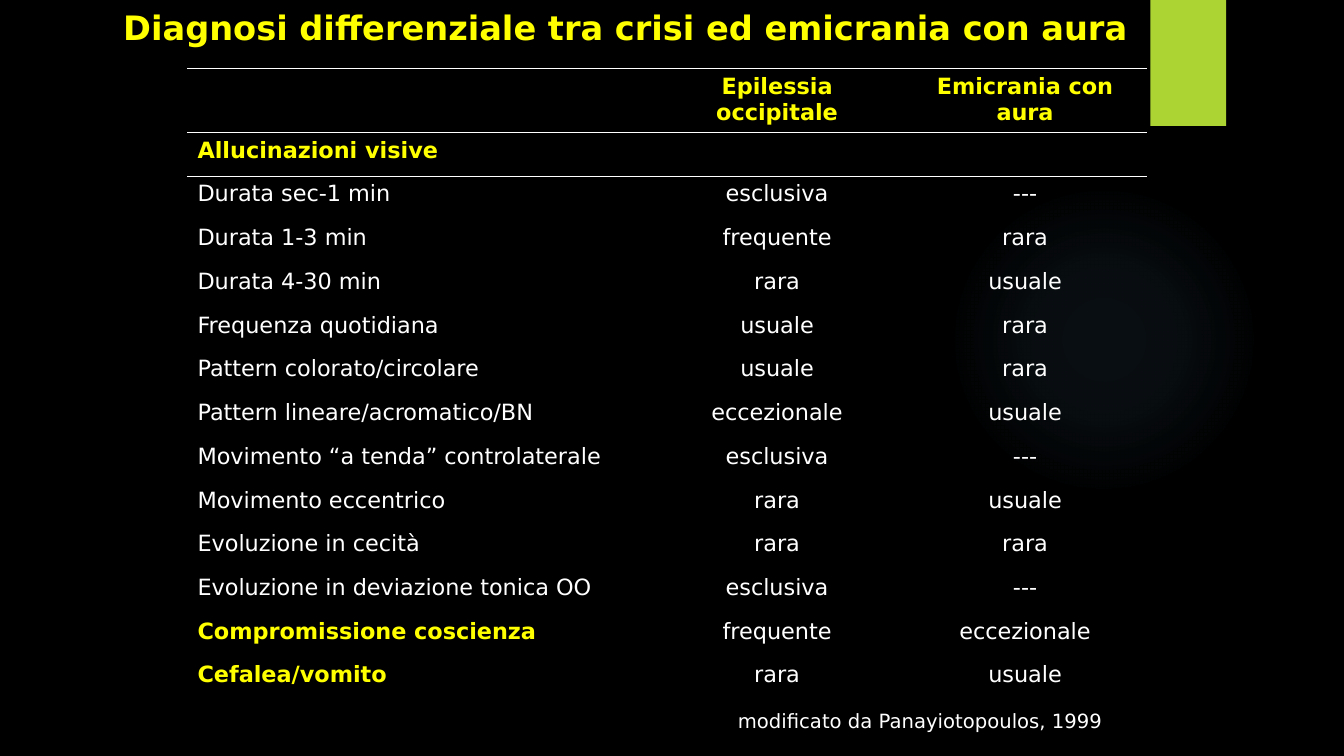
import pptx
import pptx.dml.color
import pptx.enum.shapes
import pptx.enum.text
import pptx.oxml
import pptx.oxml.ns
import pptx.util

WIDTH, HEIGHT = pptx.util.Inches(13.333), pptx.util.Inches(7.5)
FONT = "DejaVu Sans"
COLORS = {"back": "000000", "accent": "FFFF00", "text": "FFFFFF",
          "tab": "ACD433", "glow": "7AC4F0"}
NO_STYLE = "{2D5ABB26-0587-4C30-8999-92F81FD0307C}"
ALIGN = pptx.enum.text.PP_ALIGN
ANCHOR = pptx.enum.text.MSO_ANCHOR
SHAPE = pptx.enum.shapes.MSO_SHAPE

COLUMNS = [34.5, 18.75, 18.15]
HEADER_ROW, BODY_ROW = 8.4, 5.79
ROWS = [
    ("", "Epilessia occipitale", "Emicrania con aura"),
    ("Allucinazioni visive", "", ""),
    ("Durata sec-1 min", "esclusiva", "---"),
    ("Durata 1-3 min", "frequente", "rara"),
    ("Durata 4-30 min", "rara", "usuale"),
    ("Frequenza quotidiana", "usuale", "rara"),
    ("Pattern colorato/circolare", "usuale", "rara"),
    ("Pattern lineare/acromatico/BN", "eccezionale", "usuale"),
    ("Movimento “a tenda” controlaterale", "esclusiva", "---"),
    ("Movimento eccentrico", "rara", "usuale"),
    ("Evoluzione in cecità", "rara", "rara"),
    ("Evoluzione in deviazione tonica OO", "esclusiva", "---"),
    ("Compromissione coscienza", "frequente", "eccezionale"),
    ("Cefalea/vomito", "rara", "usuale"),
]
HEADINGS = {"Allucinazioni visive", "Compromissione coscienza", "Cefalea/vomito"}


def across(share):
    """Return a percentage of the slide width."""
    return round(WIDTH * share / 100)


def down(share):
    """Return a percentage of the slide height."""
    return round(HEIGHT * share / 100)


def box(x, y, w, h):
    """Return a left, top, width and height from slide percentages."""
    return across(x), down(y), across(w), down(h)


def rgb(name):
    """Return a named colour."""
    return pptx.dml.color.RGBColor.from_string(COLORS[name])


def xml(body):
    """Return an element parsed from DrawingML with the a: prefix declared."""
    tag, rest = body.split(" ", 1)
    return pptx.oxml.parse_xml(f"{tag} {pptx.oxml.ns.nsdecls('a')} {rest}")


def write(tf, text, size, color, bold=False, align=ALIGN.LEFT):
    """Write one styled paragraph into a text frame."""
    p = tf.paragraphs[0]
    p.text = text
    p.alignment = align
    p.font.name, p.font.size, p.font.bold = FONT, pptx.util.Pt(size), bold
    p.font.color.rgb = rgb(color)


def add_label(slide, place, text, size, color, bold=False,
              align=ALIGN.LEFT, anchor=ANCHOR.TOP):
    """Add a wrapped text box."""
    tf = slide.shapes.add_textbox(*place).text_frame
    tf.word_wrap = True
    tf.vertical_anchor = anchor
    write(tf, text, size, color, bold, align)


def add_block(slide, kind, place, color):
    """Add a plain shape without outline or shadow."""
    sp = slide.shapes.add_shape(kind, *place)
    sp.shadow.inherit = False
    sp.line.fill.background()
    sp.fill.solid()
    sp.fill.fore_color.rgb = rgb(color)
    return sp


def add_glow(slide, place):
    """Add an ellipse that fades out from its centre."""
    sp = add_block(slide, SHAPE.OVAL, place, "glow")
    stops = "".join(
        f'<a:gs pos="{pos * 1000}"><a:srgbClr val="{COLORS["glow"]}">'
        f'<a:alpha val="{alpha * 1000}"/></a:srgbClr></a:gs>'
        for pos, alpha in [(0, 7), (36, 6), (69, 0), (100, 0)])
    spPr = sp._element.spPr
    spPr.replace(spPr.find(pptx.oxml.ns.qn("a:solidFill")), xml(
        f'<a:gradFill rotWithShape="1"><a:gsLst>{stops}</a:gsLst><a:path path="circle">'
        '<a:fillToRect l="50000" t="50000" r="50000" b="50000"/></a:path></a:gradFill>'))


def add_rule(cell, side):
    """Draw a thin border on one side of a cell."""
    tcPr = cell._tc.get_or_add_tcPr()
    line = xml(f'<a:{side} w="12700"><a:solidFill><a:srgbClr val="{COLORS["text"]}"/>'
               f'</a:solidFill></a:{side}>')
    tcPr.insert(len(tcPr) - 1, line)


def add_comparison(slide, x, y):
    """Add the comparison table with a ruled header row."""
    heights = [HEADER_ROW] + [BODY_ROW] * (len(ROWS) - 1)
    frame = slide.shapes.add_table(
        len(ROWS), len(COLUMNS), *box(x, y, sum(COLUMNS), sum(heights)))
    table = frame.table
    table.horz_banding = table.first_row = False
    table._tbl.tblPr.find(pptx.oxml.ns.qn("a:tableStyleId")).text = NO_STYLE
    for column, share in zip(table.columns, COLUMNS):
        column.width = across(share)
    for i, (row, share) in enumerate(zip(ROWS, heights)):
        table.rows[i].height = down(share)
        for j, text in enumerate(row):
            cell = table.cell(i, j)
            cell.fill.background()
            strong = i == 0 or text in HEADINGS
            write(cell.text_frame, text, 16, "accent" if strong else "text",
                  strong, ALIGN.CENTER if j else ALIGN.LEFT)
            for side in {0: ["lnT", "lnB"], 1: ["lnT"]}.get(i, []):
                add_rule(cell, side)


def main():
    """Build and save the slide."""
    prs = pptx.Presentation()
    prs.slide_width, prs.slide_height = WIDTH, HEIGHT
    slide = prs.slides.add_slide(prs.slide_layouts[6])
    slide.background.fill.solid()
    slide.background.fill.fore_color.rgb = rgb("back")
    add_glow(slide, box(70.58, 24.4, 23.1, 41.07))
    add_block(slide, SHAPE.RECTANGLE, box(85.6, 0, 5.63, 16.67), "tab")
    add_label(slide, box(6.45, 0, 80.18, 7.07),
              "Diagnosi differenziale tra crisi ed emicrania con aura",
              24, "accent", True, ALIGN.CENTER, ANCHOR.MIDDLE)
    add_comparison(slide, 13.95, 9.07)
    add_label(slide, box(54.16, 93.07, 28.95, 4.4),
              "modificato da Panayiotopoulos, 1999", 14, "text")
    prs.save("out.pptx")


if __name__ == "__main__":
    main()
